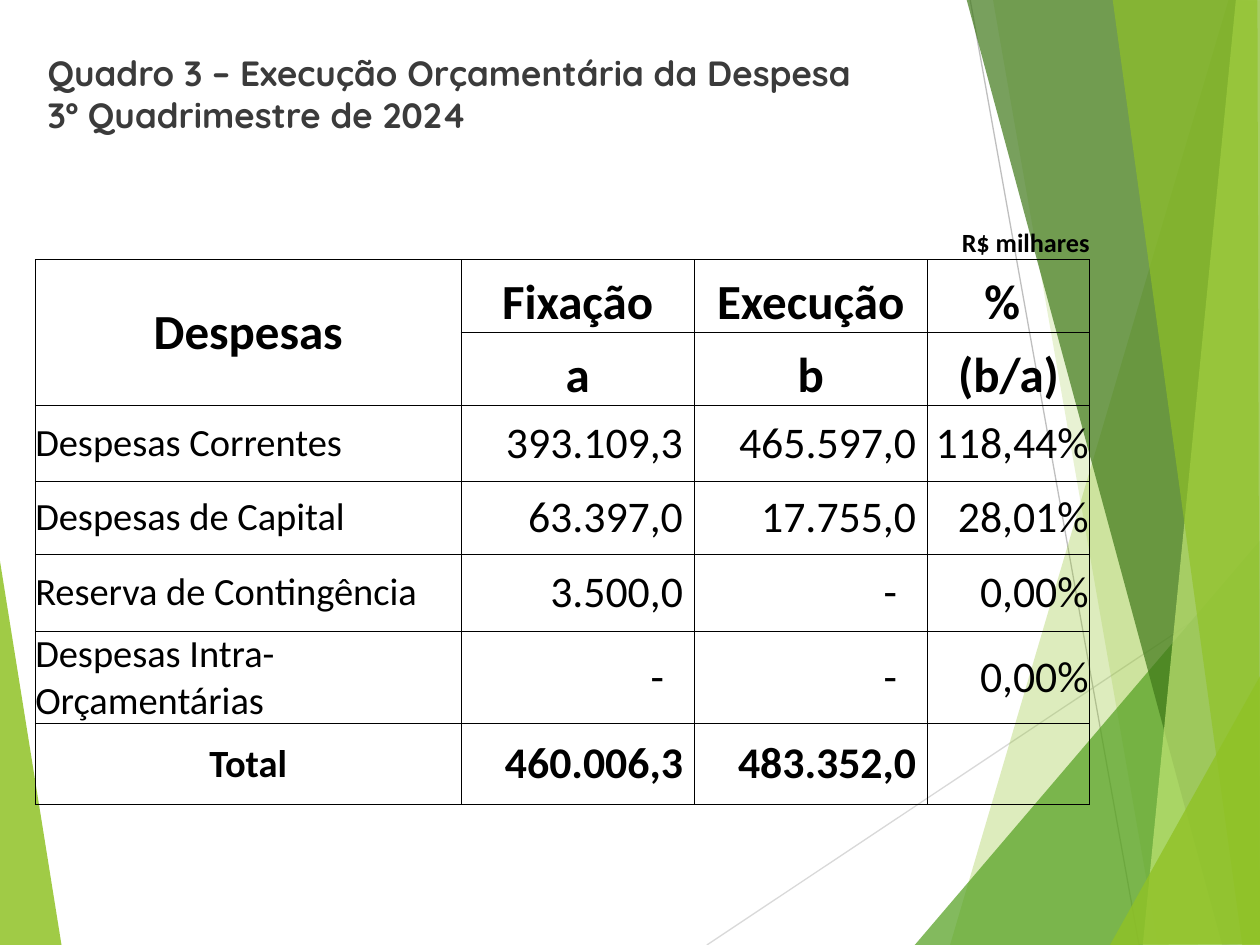
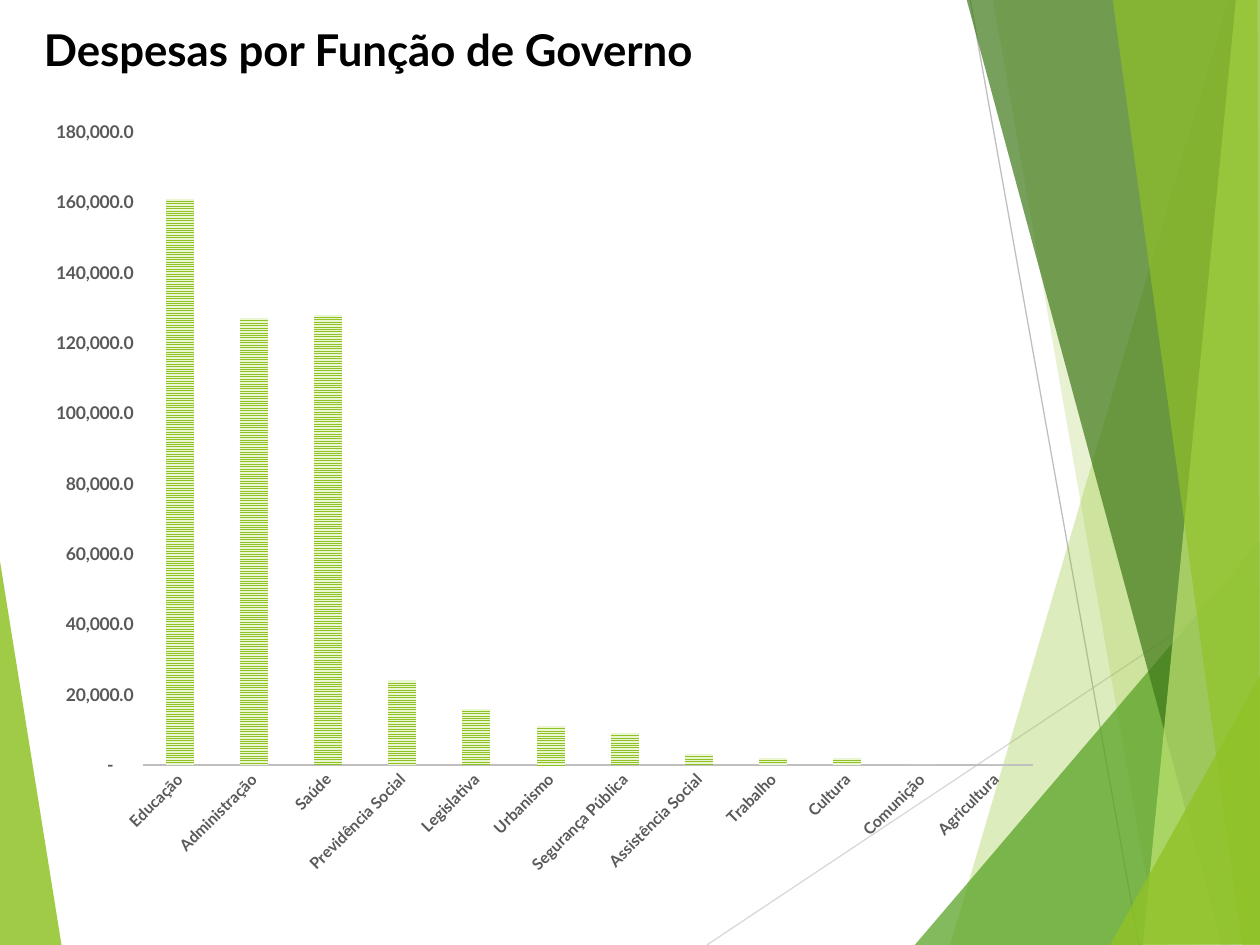
from lxml.etree import SubElement
from pptx import Presentation
from pptx.chart.data import CategoryChartData
from pptx.dml.color import RGBColor
from pptx.enum.chart import XL_CHART_TYPE, XL_TICK_MARK
from pptx.enum.dml import MSO_PATTERN
from pptx.enum.shapes import MSO_CONNECTOR
from pptx.enum.text import MSO_ANCHOR, PP_ALIGN
from pptx.oxml import parse_xml
from pptx.oxml.ns import nsdecls, qn
from pptx.util import Inches, Pt

GREEN, BLACK, GRAY, TITLE_GRAY = "90C226", "000000", "595959", "3B3B3B"
NO_STYLE = "{2D5ABB26-0587-4C30-8999-92F81FD0307C}"

LEFT_BAND = [(-0.01, 4.39), (0.49, 7.51), (-0.01, 7.5)], GREEN, 85
RAYS = [((5.61, 7.5), (10.01, 4.57), "D9D9D9"), ((7.7, 0), (9.04, 7.5), "BFBFBF")]
RIGHT_BANDS = [
    ([(9.75, 0), (7.54, 7.5), (10.02, 7.51), (10.01, 0.01)], GREEN, 30),
    ([(7.88, -0.01), (9.19, 7.5), (10.01, 7.5), (10.01, -0.01)], GREEN, 20),
    ([(7.26, 7.5), (10, 4.29), (10.01, 7.5)], "54A021", 72),
    ([(7.67, -0.01), (9.7, 7.5), (10.01, 7.49), (10.01, -0.01)], "3F7819", 70),
    ([(9.81, -0.01), (9.07, 7.5), (10.01, 7.5), (10, -0.01)], "C0E474", 70),
    ([(8.83, -0.01), (9.86, 7.5), (10, 7.5), (9.98, -0.01)], GREEN, 65),
    ([(8.81, 7.5), (10.01, 5.35), (10.01, 7.49)], GREEN, 80),
]

TABLE_TITLE = "Quadro 3 – Execução Orçamentária da Despesa\v3º Quadrimestre de 2024"
UNIT = "R$ milhares"
HEADERS = [("Despesas", "Fixação", "Execução", "%"), ("", "a", "b", "(b/a)")]
EXPENSES = [
    ("Despesas Correntes", "393.109,3", "465.597,0", "118,44%"),
    ("Despesas de Capital", "63.397,0", "17.755,0", "28,01%"),
    ("Reserva de Contingência", "3.500,0", "-", "0,00%"),
    ("Despesas Intra-Orçamentárias", "-", "-", "0,00%"),
    ("Total", "460.006,3", "483.352,0", ""),
]
COLUMN_WIDTHS = [3.38, 0.12, 1.61, 0.9, 0.95, 1.29]
ROW_HEIGHTS = [0.83, 0.58, 0.58, 0.6, 0.58, 0.61, 0.65, 0.64]
FIELD_COLUMNS = [0, 1, 3, 5]

CHART_TITLE = "Despesas por Função de Governo"
SPENDING = {
    "Educação": 161000, "Administração": 127000, "Saúde": 128000,
    "Previdência Social": 24000, "Legislativa": 16000, "Urbanismo": 11000,
    "Segurança Pública": 9000, "Assistência Social": 3000, "Trabalho": 2000,
    "Cultura": 2000, "Comunição": 0, "Agricultura": 0,
}
NUMBER_FORMAT = '_-* #,##0.0_-;\\-* #,##0.0_-;_-* "-"??_-;'


def rgb(value):
    return RGBColor.from_string(value)


def style_font(font, name, size, color, bold):
    font.name, font.size, font.bold = name, Pt(size), bold
    font.color.rgb = rgb(color)


def add_band(slide, points, color, opacity):
    corners = [(Inches(x), Inches(y)) for x, y in points]
    builder = slide.shapes.build_freeform(*corners[0])
    builder.add_line_segments(corners[1:])
    shape = builder.convert_to_shape()
    shape.shadow.inherit = False
    shape.fill.solid()
    shape.fill.fore_color.rgb = rgb(color)
    shape.line.fill.background()
    color_node = shape._element.spPr.find(qn("a:solidFill"))[0]
    SubElement(color_node, qn("a:alpha"), val=str(opacity * 1000))


def add_ray(slide, start, end, color):
    ends = [Inches(value) for value in start + end]
    connector = slide.shapes.add_connector(MSO_CONNECTOR.STRAIGHT, *ends)
    connector.line.color.rgb = rgb(color)
    connector.line.width = Pt(0.75)
    SubElement(connector._element.spPr, qn("a:effectLst"))


def add_decorated_slide(presentation):
    slide = presentation.slides.add_slide(presentation.slide_layouts[6])
    add_band(slide, *LEFT_BAND)
    for ray in RAYS:
        add_ray(slide, *ray)
    for band in RIGHT_BANDS:
        add_band(slide, *band)
    return slide


def add_title(slide, text, box, font_name, size, color, wrap):
    frame = slide.shapes.add_textbox(*map(Inches, box)).text_frame
    frame.word_wrap = wrap
    frame.text = text
    for run in frame.paragraphs[0].runs:
        style_font(run.font, font_name, size, color, True)


def add_borders(cell, sides):
    properties = cell._tc.get_or_add_tcPr()
    for position, side in enumerate(sides):
        properties.insert(position, parse_xml(
            f'<a:ln{side} {nsdecls("a")} w="6350"><a:solidFill>'
            f'<a:srgbClr val="{BLACK}"/></a:solidFill></a:ln{side}>'))


def fill_cell(cell, text, size, bold, align, anchor=MSO_ANCHOR.MIDDLE, right=0):
    cell.margin_left = cell.margin_top = cell.margin_bottom = 0
    cell.margin_right = Inches(right)
    cell.vertical_anchor = anchor
    cell.text = text
    paragraph = cell.text_frame.paragraphs[0]
    paragraph.alignment = align
    for run in paragraph.runs:
        style_font(run.font, "Calibri", size, BLACK, bold)


def right_gap(text):
    if text.endswith("%"):
        return 0.01
    return 0.24 if text == "-" else 0.09


def add_expense_table(slide):
    frame = slide.shapes.add_table(
        len(ROW_HEIGHTS), len(COLUMN_WIDTHS), Inches(0.28), Inches(1.23),
        Inches(sum(COLUMN_WIDTHS)), Inches(sum(ROW_HEIGHTS)))
    table = frame.table
    table._tbl.tblPr[0].text = NO_STYLE
    table.first_row = table.horz_banding = False
    for column, width in zip(table.columns, COLUMN_WIDTHS):
        column.width = Inches(width)
    for index, height in enumerate(ROW_HEIGHTS):
        table.rows[index].height = Inches(height)
        for cell in table.rows[index].cells:
            cell.fill.background()
            add_borders(cell, "LRTB" if index else "B")
        if index:
            for start in (1, 3):
                table.cell(index, start).merge(table.cell(index, start + 1))
    table.cell(1, 0).merge(table.cell(2, 0))

    fill_cell(table.cell(0, 5), UNIT, 15, True, PP_ALIGN.RIGHT, MSO_ANCHOR.BOTTOM)
    for row, labels in enumerate(HEADERS, 1):
        for column, label in zip(FIELD_COLUMNS, labels):
            if label:
                anchor = MSO_ANCHOR.BOTTOM if column else MSO_ANCHOR.MIDDLE
                fill_cell(table.cell(row, column), label, 28, True, PP_ALIGN.CENTER,
                          anchor, 0.1 if label == "%" else 0)
    for row, (name, *amounts) in enumerate(EXPENSES, 3):
        total = name == "Total"
        align = PP_ALIGN.CENTER if total else PP_ALIGN.LEFT
        fill_cell(table.cell(row, 0), name, 22, total, align)
        for column, amount in zip(FIELD_COLUMNS[1:], amounts):
            fill_cell(table.cell(row, column), amount, 25, total, PP_ALIGN.RIGHT,
                      right=right_gap(amount))


def add_spending_chart(slide):
    data = CategoryChartData()
    data.categories = list(SPENDING)
    data.add_series("Series 1", list(SPENDING.values()))
    box = map(Inches, (0.25, 0.84, 8.11, 6.22))
    chart = slide.shapes.add_chart(XL_CHART_TYPE.COLUMN_CLUSTERED, *box, data).chart
    chart.has_title = chart.has_legend = False
    style_font(chart.font, "Lato", 10, BLACK, False)

    plot = chart.plots[0]
    plot.vary_by_categories = False
    plot.gap_width, plot.overlap = 164, -22
    fill = plot.series[0].format.fill
    fill.patterned()
    fill.pattern = MSO_PATTERN.NARROW_HORIZONTAL
    fill.fore_color.rgb = rgb(GREEN)
    fill.back_color.rgb = rgb("EAF6D1")

    for axis, size in ((chart.category_axis, 9), (chart.value_axis, 10)):
        axis.major_tick_mark = axis.minor_tick_mark = XL_TICK_MARK.NONE
        axis.has_major_gridlines = False
        style_font(axis.tick_labels.font, "Lato", size, GRAY, True)
    category_axis, value_axis = chart.category_axis, chart.value_axis
    category_axis.format.line.color.rgb = rgb("BFBFBF")
    category_axis.format.line.width = Pt(1.5)
    label_body = category_axis._element.find(qn("c:txPr")).find(qn("a:bodyPr"))
    label_body.set("rot", "-2700000")
    value_axis.format.line.fill.background()
    value_axis.minimum_scale, value_axis.maximum_scale = 0, 180000
    value_axis.major_unit = 20000
    value_axis.tick_labels.number_format = NUMBER_FORMAT
    value_axis.tick_labels.number_format_is_linked = False


def main():
    presentation = Presentation()
    presentation.slide_width, presentation.slide_height = Inches(10), Inches(7.5)

    slide = add_decorated_slide(presentation)
    add_title(slide, TABLE_TITLE, (0.28, 0.36, 8.5, 0.74), "Quicksand", 20, TITLE_GRAY, True)
    add_expense_table(slide)

    slide = add_decorated_slide(presentation)
    add_title(slide, CHART_TITLE, (0.25, 0.13, 6.03, 0.52), "Lato", 25, BLACK, False)
    add_spending_chart(slide)

    presentation.save("out.pptx")


if __name__ == "__main__":
    main()
